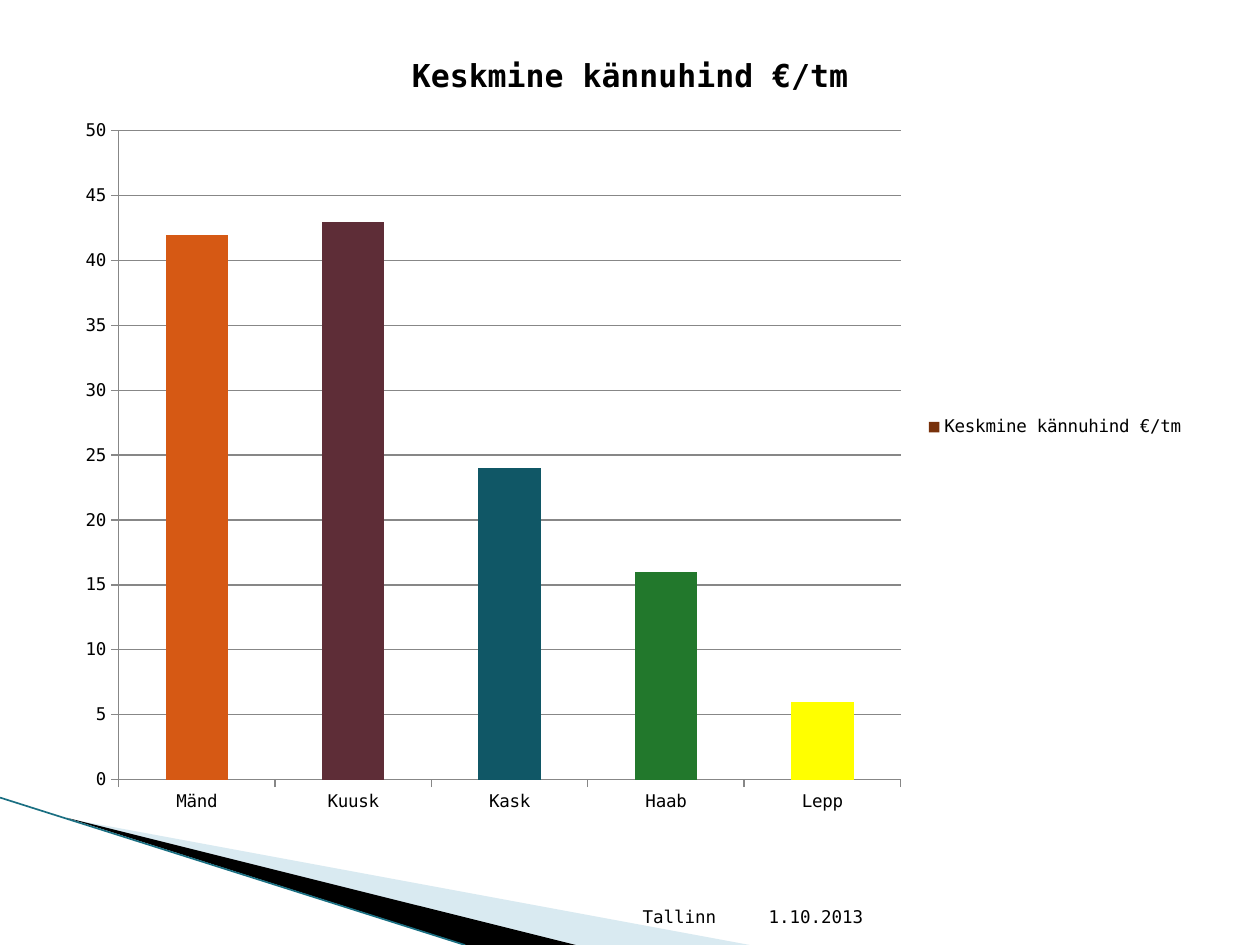
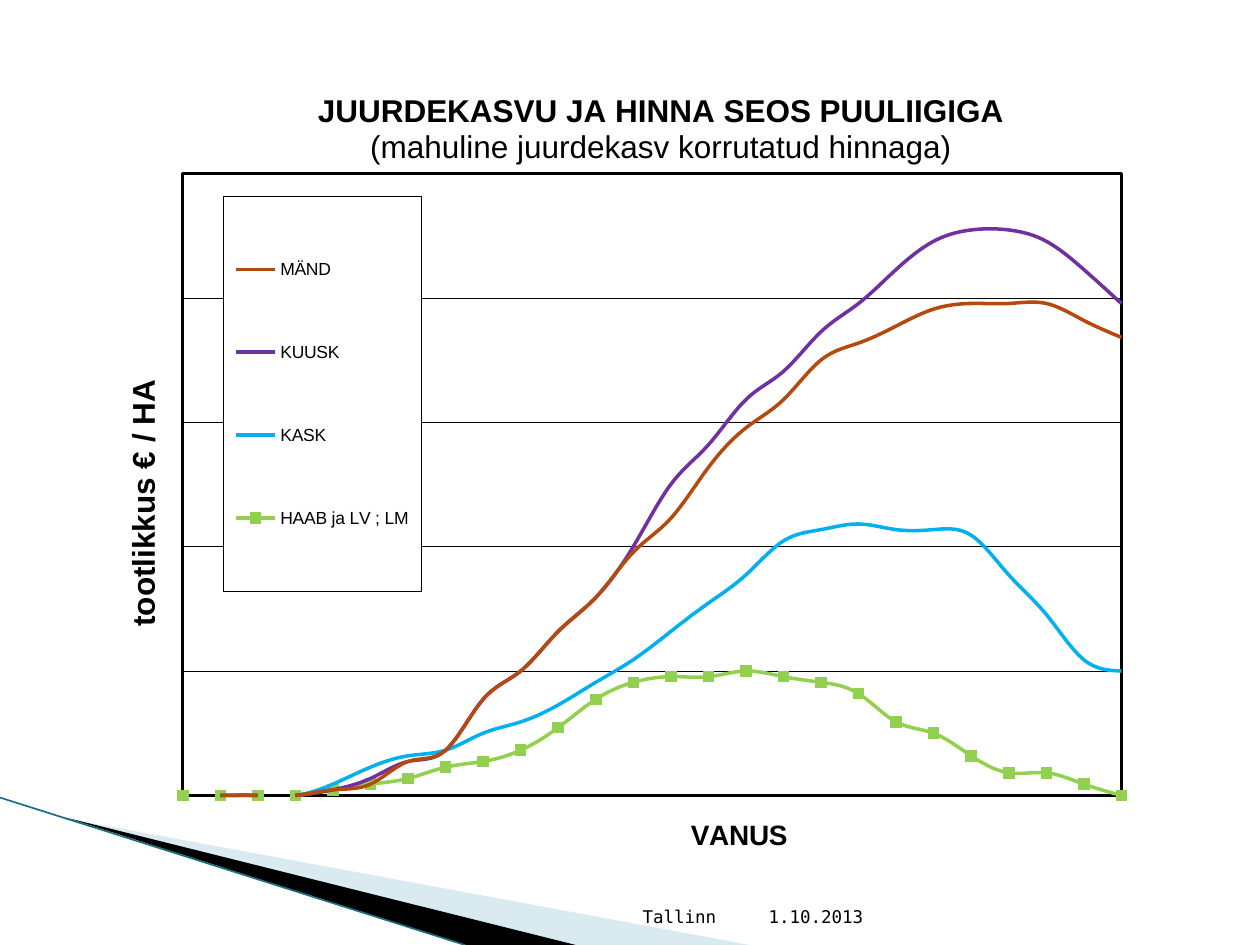
from lxml import etree
from pptx import Presentation
from pptx.chart.data import CategoryChartData, XyChartData
from pptx.dml.color import RGBColor
from pptx.enum.chart import XL_CHART_TYPE as ChartType
from pptx.enum.chart import XL_LEGEND_POSITION as LegendPosition
from pptx.enum.chart import XL_MARKER_STYLE as MarkerStyle
from pptx.enum.chart import XL_TICK_MARK as TickMark
from pptx.enum.shapes import MSO_CONNECTOR as Connector
from pptx.enum.text import MSO_ANCHOR as Anchor
from pptx.oxml import parse_xml
from pptx.oxml.ns import nsdecls, qn
from pptx.util import Inches, Pt

BLACK = RGBColor(0x00, 0x00, 0x00)
PALE_BLUE = RGBColor(0xA0, 0xCB, 0xDC)
TEAL = RGBColor(0x1A, 0x6F, 0x82)
GRID_GREY = RGBColor(0x87, 0x87, 0x87)
LEGEND_BROWN = RGBColor(0x78, 0x31, 0x0B)
MONO = "DejaVu Sans Mono"
SANS = "Arial"

STUMP_PRICES = [
    ("Mänd", 42, RGBColor(0xD6, 0x59, 0x14)),
    ("Kuusk", 43, RGBColor(0x5E, 0x2D, 0x37)),
    ("Kask", 24, RGBColor(0x10, 0x57, 0x66)),
    ("Haab", 16, RGBColor(0x22, 0x78, 0x2C)),
    ("Lepp", 6, RGBColor(0xFF, 0xFF, 0x00)),
]
FIRST_AGE = 2
YIELDS = [
    ("MÄND", RGBColor(0xB5, 0x4A, 0x10),
     [0, 0, 0, 0, 0, 0, 0, 1, 2, 6, 8, 17, 22, 29, 35, 43, 49, 58, 65, 70,
      77, 80, 83, 86, 87, 87, 87, 84, 81]),
    ("KUUSK", RGBColor(0x70, 0x30, 0xA0),
     [0, 0, 0, 0, 0, 0, 0, 1, 3, 6, 8, 17, 22, 29, 35, 44, 55, 62, 70, 75,
      82, 87, 93, 98, 100, 100, 98, 93, 87]),
    ("KASK", RGBColor(0x00, 0xB0, 0xF0),
     [0, 0, 0, 0, 0, 0, 0, 2, 5, 7, 8, 11, 13, 16, 20, 24, 29, 34, 39, 45,
      47, 48, 47, 47, 46, 39, 32, 24, 22]),
    ("HAAB ja LV ; LM", RGBColor(0x92, 0xD0, 0x50),
     [0, 0, 0, 0, 0, 0, 0, 1, 2, 3, 5, 6, 8, 12, 17, 20, 21, 21, 22, 21,
      20, 18, 13, 11, 7, 4, 4, 2, 0]),
]


def add_band(slide, corners, color, opacity=None):
    """Draw one filled wedge through the given corners in inches."""
    points = [(Inches(x), Inches(y)) for x, y in corners]
    builder = slide.shapes.build_freeform(*points[0])
    builder.add_line_segments(points[1:], close=True)
    band = builder.convert_to_shape()
    band.shadow.inherit = False
    band.fill.solid()
    band.fill.fore_color.rgb = color
    band.line.fill.background()
    if opacity:
        tint = band._element.spPr.find(".//" + qn("a:srgbClr"))
        etree.SubElement(tint, qn("a:alpha")).set("val", str(opacity * 1000))


def add_footer(slide):
    """Write the place and date at the foot of the slide."""
    footer = slide.shapes.add_textbox(
        Inches(4.79), Inches(7.01), Inches(2.57), Inches(0.4))
    frame = footer.text_frame
    frame.word_wrap = True
    frame.vertical_anchor = Anchor.BOTTOM
    frame.margin_left = Inches(0.31)
    place_and_date = frame.paragraphs[0]
    place_and_date.text = "Tallinn\t1.10.2013"
    tabs = etree.SubElement(
        place_and_date._p.get_or_add_pPr(), qn("a:tabLst"))
    etree.SubElement(
        tabs, qn("a:tab"), pos=str(Inches(1)), algn="l")
    style_font(place_and_date.font, MONO, 10)


def add_themed_slide(prs):
    """Add a slide with the corner wedges, the edge line and the footer."""
    slide = prs.slides.add_slide(prs.slide_layouts[6])
    add_band(slide, [(0.55, 6.5), (5.95, 7.5), (4.56, 7.5)], PALE_BLUE, 40)
    add_band(slide, [(0.53, 6.49), (4.57, 7.5), (3.7, 7.5)], BLACK)
    edge = slide.shapes.add_connector(
        Connector.STRAIGHT, 0, Inches(6.33), Inches(3.69), Inches(7.5))
    edge.line.color.rgb = TEAL
    edge.line.width = Pt(0.95)
    etree.SubElement(edge._element.spPr, qn("a:effectLst"))
    add_footer(slide)
    return slide


def style_font(font, name, size, bold=False):
    """Give a font its name, size and weight in black."""
    font.name = name
    font.size = Pt(size)
    font.bold = bold
    font.color.rgb = BLACK


def write_heading(heading, lines, font_name):
    """Fill a chart or axis title with (text, size, bold) lines."""
    frame = heading.text_frame
    for number, (text, size, bold) in enumerate(lines):
        paragraph = frame.add_paragraph() if number else frame.paragraphs[0]
        paragraph.text = text
        style_font(paragraph.font, font_name, size, bold)


def place_part(element, index, target=None, **fractions):
    """Fix a chart part at fractions of the chart area."""
    for old in element.findall(qn("c:layout")):
        element.remove(old)
    layout = etree.Element(qn("c:layout"))
    manual = etree.SubElement(layout, qn("c:manualLayout"))
    if target:
        etree.SubElement(manual, qn("c:layoutTarget")).set("val", target)
    for side in ("x", "y"):
        etree.SubElement(manual, qn(f"c:{side}Mode")).set("val", "edge")
    for key, value in fractions.items():
        etree.SubElement(manual, qn(f"c:{key}")).set("val", str(value))
    element.insert(index, layout)


def frame_part(element, width, fill):
    """Outline a chart part in black over the given fill."""
    element.append(parse_xml(
        f'<c:spPr {nsdecls("c", "a")}>{fill}<a:ln w="{Pt(width)}">'
        f'<a:solidFill><a:srgbClr val="{BLACK}"/></a:solidFill></a:ln></c:spPr>'))


def add_price_chart(slide):
    """Add the column chart of mean stumpage prices."""
    heading = "Keskmine kännuhind €/tm"
    data = CategoryChartData()
    data.categories = [tree for tree, _, _ in STUMP_PRICES]
    data.add_series(heading, [price for _, price, _ in STUMP_PRICES])
    chart = slide.shapes.add_chart(
        ChartType.COLUMN_CLUSTERED, Inches(0.5), Inches(0.21),
        Inches(9), Inches(6.36), data).chart
    style_font(chart.font, MONO, 10)
    chart.has_title = True
    write_heading(chart.chart_title, [(heading, 18, True)], MONO)
    chart.has_legend = True
    chart.legend.position = LegendPosition.RIGHT
    chart.legend.include_in_layout = False

    plot = chart.plots[0]
    plot.vary_by_categories = False
    plot.gap_width = 150
    prices = plot.series[0]
    prices.format.fill.solid()
    prices.format.fill.fore_color.rgb = LEGEND_BROWN
    for index, (_, _, color) in enumerate(STUMP_PRICES):
        column_fill = prices.points[index].format.fill
        column_fill.solid()
        column_fill.fore_color.rgb = color

    price_axis = chart.value_axis
    price_axis.minimum_scale, price_axis.maximum_scale = 0, 50
    price_axis.major_unit = 5
    for axis in (chart.category_axis, price_axis):
        axis.major_tick_mark = TickMark.OUTSIDE
        axis.format.line.color.rgb = GRID_GREY
    price_axis.major_gridlines.format.line.color.rgb = GRID_GREY


def style_yield_curve(curve, color):
    """Draw one yield series as a smooth coloured curve."""
    curve._element.find(qn("c:smooth")).set("val", "1")
    curve.format.line.color.rgb = color
    curve.format.line.width = Pt(2)


def mark_points(curve, color):
    """Put square markers on a curve."""
    marker = curve.marker
    marker.style = MarkerStyle.SQUARE
    marker.size = 6
    marker.format.fill.solid()
    marker.format.fill.fore_color.rgb = color
    marker.format.line.color.rgb = color


def add_yield_chart(slide):
    """Add the curves of yield value by age for each tree species."""
    data = XyChartData()
    for tree, _, values in YIELDS:
        series = data.add_series(tree)
        for age, value in enumerate(values, FIRST_AGE):
            series.add_data_point(age, value)
    chart = slide.shapes.add_chart(
        ChartType.XY_SCATTER_SMOOTH_NO_MARKERS, Inches(0.28), Inches(0.36),
        Inches(9.22), Inches(6.69), data).chart
    style_font(chart.font, SANS, 10)
    curves = list(chart.plots[0].series)
    for curve, (_, color, _) in zip(curves, YIELDS):
        style_yield_curve(curve, color)
    mark_points(curves[-1], YIELDS[-1][1])

    age_axis, yield_axis = chart.category_axis, chart.value_axis
    age_axis.minimum_scale, age_axis.maximum_scale = 5, 30
    age_axis.has_major_gridlines = False
    yield_axis.minimum_scale, yield_axis.maximum_scale = 0, 110
    yield_axis.major_unit = 22
    yield_axis.has_major_gridlines = True
    grid_line = yield_axis.major_gridlines.format.line
    grid_line.color.rgb = BLACK
    grid_line.width = Pt(0.25)
    age_axis.visible = yield_axis.visible = False

    chart.has_title = age_axis.has_title = yield_axis.has_title = True
    headings = [
        (chart.chart_title, 0.24, 0.05,
         [("JUURDEKASVU JA HINNA SEOS PUULIIGIGA", 18, True),
          ("(mahuline juurdekasv korrutatud hinnaga)", 18, False)]),
        (age_axis.axis_title, 0.56, 0.91, [("VANUS", 16, True)]),
        (yield_axis.axis_title, 0.07, 0.39, [("tootlikkus € / HA", 18, True)]),
    ]
    for heading, x, y, lines in headings:
        write_heading(heading, lines, SANS)
        place_part(heading._element, 1, x=x, y=y)
    turned = yield_axis.axis_title._element.find(".//" + qn("a:bodyPr"))
    turned.set("rot", "-5400000")
    turned.set("vert", "horz")

    plot_area = chart._chartSpace.find(".//" + qn("c:plotArea"))
    place_part(plot_area, 0, "inner", x=0.127, y=0.152, w=0.808, h=0.738)
    frame_part(plot_area, 1.5, "<a:noFill/>")

    chart.has_legend = True
    legend = chart.legend
    legend.position = LegendPosition.BOTTOM
    legend.include_in_layout = False
    place_part(legend._element, 1, x=0.162, y=0.179, w=0.17, h=0.469)
    frame_part(legend._element, 0.25,
               '<a:solidFill><a:srgbClr val="FFFFFF"/></a:solidFill>')
    style_font(legend.font, SANS, 10)


def main():
    """Build the two chart slides and save them."""
    prs = Presentation()
    prs.slide_width, prs.slide_height = Inches(10), Inches(7.5)
    add_price_chart(add_themed_slide(prs))
    add_yield_chart(add_themed_slide(prs))
    prs.save("out.pptx")


if __name__ == "__main__":
    main()
